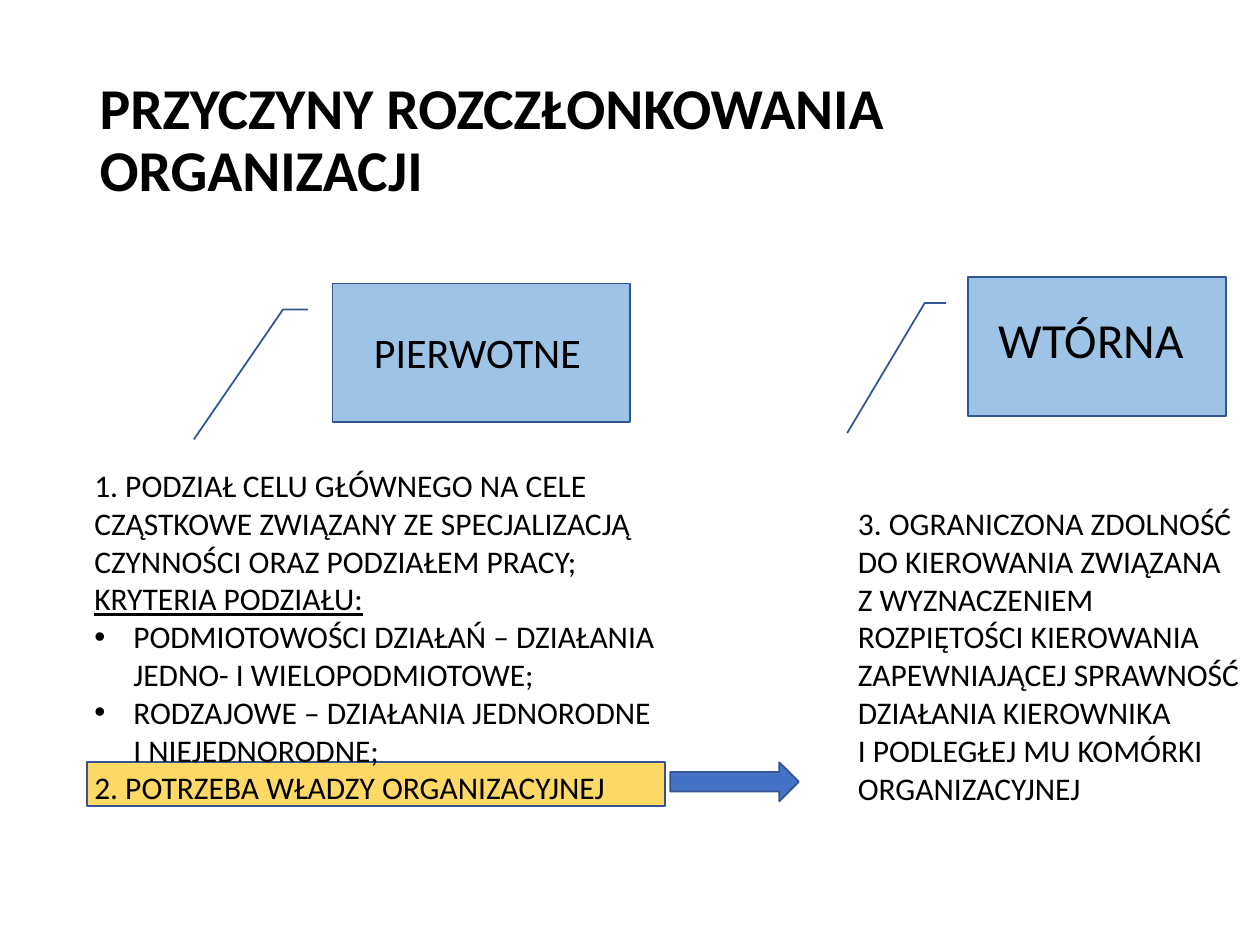
from lxml.etree import SubElement
from pptx import Presentation
from pptx.dml.color import RGBColor
from pptx.enum.shapes import MSO_SHAPE
from pptx.enum.text import MSO_ANCHOR, MSO_AUTO_SIZE, PP_ALIGN
from pptx.oxml.ns import qn
from pptx.util import Inches, Pt

BLACK = RGBColor(0x00, 0x00, 0x00)
OUTLINE = RGBColor(0x32, 0x54, 0x91)
LIGHT_BLUE = RGBColor(0x9D, 0xC3, 0xE6)
BLUE = RGBColor(0x44, 0x72, 0xC4)
YELLOW = RGBColor(0xFF, 0xD9, 0x66)

PRIMARY_CAUSES = [
    ("1. PODZIAŁ CELU GŁÓWNEGO NA CELE CZĄSTKOWE ZWIĄZANY ZE SPECJALIZACJĄ "
     "CZYNNOŚCI ORAZ PODZIAŁEM PRACY;", {}),
    ("KRYTERIA PODZIAŁU:", {"underline": True}),
    ("PODMIOTOWOŚCI DZIAŁAŃ – DZIAŁANIA JEDNO- I WIELOPODMIOTOWE;", {"bullet": "•"}),
    ("RODZAJOWE – DZIAŁANIA JEDNORODNE \vI NIEJEDNORODNE;", {"bullet": "•"}),
    ("2. POTRZEBA WŁADZY ORGANIZACYJNEJ", {}),
]
SECONDARY_CAUSE = [
    ("3. OGRANICZONA ZDOLNOŚĆ DO KIEROWANIA ZWIĄZANA \vZ WYZNACZENIEM "
     "ROZPIĘTOŚCI KIEROWANIA ZAPEWNIAJĄCEJ SPRAWNOŚĆ DZIAŁANIA KIEROWNIKA "
     "\vI PODLEGŁEJ MU KOMÓRKI ORGANIZACYJNEJ", {}),
]


class CausesSlide:
    """Holds the text style and the slide, and adds each kind of element."""

    font_name = "Calibri"
    bullet_indent = Inches(0.31)

    def __init__(self, deck):
        self.slide = deck.slides.add_slide(deck.slide_layouts[5])

    def style(self, paragraph, **font_format):
        for attribute, value in {"name": self.font_name, **font_format}.items():
            setattr(paragraph.font, attribute, value)
        paragraph.font.color.rgb = BLACK

    def title(self, wording, left, top, width, height):
        heading = self.slide.shapes.title
        place = {"left": left, "top": top, "width": width, "height": height}
        for attribute, value in place.items():
            setattr(heading, attribute, Inches(value))
        frame = heading.text_frame
        frame.text = wording
        frame_format = {"word_wrap": True, "auto_size": MSO_AUTO_SIZE.NONE,
                        "vertical_anchor": MSO_ANCHOR.MIDDLE}
        for attribute, value in frame_format.items():
            setattr(frame, attribute, value)
        paragraph = frame.paragraphs[0]
        paragraph.alignment = PP_ALIGN.LEFT
        paragraph.line_spacing = 0.9
        self.style(paragraph, size=Pt(33), bold=True)

    def block(self, preset, fill, *place):
        block = self.slide.shapes.add_shape(preset, *map(Inches, place))
        block.shadow.inherit = False
        block.fill.solid()
        block.fill.fore_color.rgb = fill
        block.line.color.rgb = OUTLINE
        block.line.width = Pt(1)

    def bullet(self, paragraph, mark):
        properties = paragraph._p.get_or_add_pPr()
        properties.set("marL", str(self.bullet_indent))
        properties.set("indent", str(-self.bullet_indent))
        SubElement(properties, qn("a:buFont"), typeface="Arial")
        SubElement(properties, qn("a:buChar"), char=mark)

    def text(self, entries, size, *place):
        frame = self.slide.shapes.add_textbox(*map(Inches, place)).text_frame
        frame.word_wrap = True
        frame.auto_size = MSO_AUTO_SIZE.SHAPE_TO_FIT_TEXT
        for index, (wording, look) in enumerate(entries):
            paragraph = frame.add_paragraph() if index else frame.paragraphs[0]
            paragraph.text = wording
            if "bullet" in look:
                self.bullet(paragraph, look["bullet"])
            self.style(paragraph, size=Pt(size))
            for run in paragraph.runs:
                run.font.underline = look.get("underline")


def main():
    deck = Presentation()
    deck.slide_width, deck.slide_height = Inches(10), Inches(7.5)
    causes = CausesSlide(deck)

    causes.block(MSO_SHAPE.RECTANGLE, YELLOW, 0.69, 6.05, 4.59, 0.35)
    causes.title("PRZYCZYNY ROZCZŁONKOWANIA ORGANIZACJI", 0.69, 0.4, 8.62, 1.45)

    causes.block(MSO_SHAPE.LINE_CALLOUT_2, LIGHT_BLUE, 2.64, 2.25, 2.36, 1.1)
    causes.text([("PIERWOTNE", {})], 24, 2.87, 2.54, 1.97, 0.5)
    causes.text(PRIMARY_CAUSES, 18, 0.65, 3.65, 5.07, 2.83)

    causes.block(MSO_SHAPE.RIGHT_ARROW, BLUE, 5.32, 6.05, 1.02, 0.31)

    causes.text(SECONDARY_CAUSE, 18, 6.71, 3.95, 3.32, 2.52)
    causes.block(MSO_SHAPE.LINE_CALLOUT_2, LIGHT_BLUE, 7.68, 2.2, 2.05, 1.1)
    causes.text([("WTÓRNA", {})], 28, 7.83, 2.41, 1.81, 0.57)

    deck.save("out.pptx")


if __name__ == "__main__":
    main()
